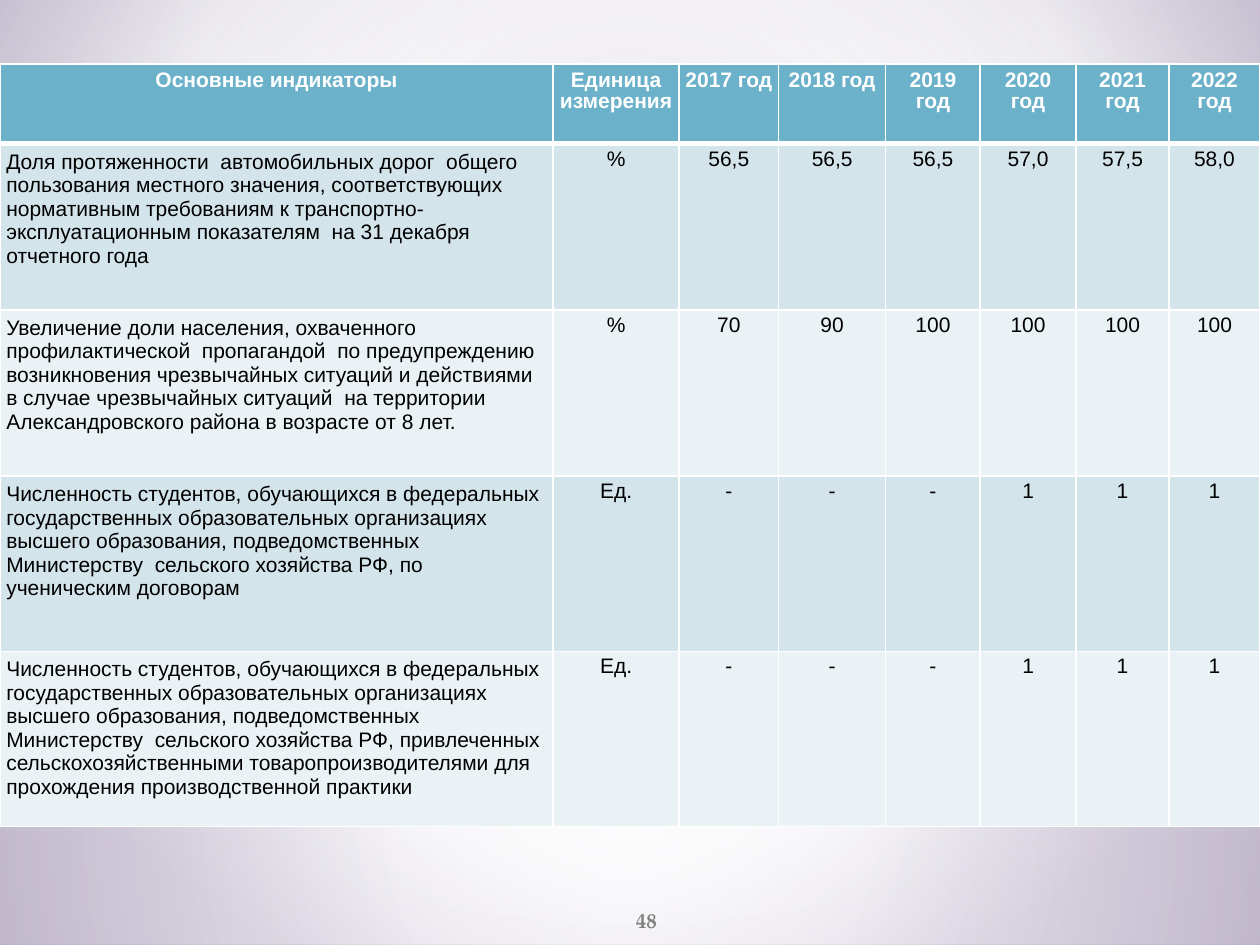
from lxml.etree import SubElement
from pptx import Presentation
from pptx.dml.color import RGBColor
from pptx.enum.shapes import MSO_SHAPE as Preset
from pptx.enum.text import MSO_ANCHOR as Anchor, PP_ALIGN as Align
from pptx.oxml.ns import qn
from pptx.util import Inches, Pt

WIDTH, HEIGHT = 10, 7.5
WHITE, BLACK, GREY = "FFFFFF", "000000", "808080"
LILAC = "C9C2D1"
HEADER_FILL, BAND_FILLS = "6BB1C9", ("D4E4EB", "EBF2F5")
CENTRE = (50, 50, 50, 50)

COLUMN_WIDTHS = (4.39, 1, 0.79, 0.85, 0.75, 0.76, 0.74, 0.72)
ROW_HEIGHTS = (0.63, 1.32, 1.32, 1.39, 1.39)
STUDENTS = (
    "Численность студентов, обучающихся в федеральных государственных "
    "образовательных организациях высшего образования, подведомственных "
    "Министерству  сельского хозяйства РФ, "
)
HEADINGS = ("Основные индикаторы", "Единица измерения", "2017 год  ",
            *(f"{year} год" for year in range(2018, 2023)))
INDICATORS = (
    ("Доля протяженности  автомобильных дорог  общего пользования местного "
     "значения, соответствующих  нормативным требованиям к "
     "транспортно-эксплуатационным показателям  на 31 декабря  отчетного года",
     "%", "56,5", "56,5", "56,5", "57,0", "57,5", "58,0"),
    ("Увеличение доли населения, охваченного профилактической  пропагандой  "
     "по предупреждению возникновения чрезвычайных ситуаций и действиями в "
     "случае чрезвычайных ситуаций  на территории Александровского района в "
     "возрасте от 8 лет.",
     "%", "70", "90", "100", "100", "100", "100"),
    (STUDENTS + "по ученическим договорам",
     "Ед.", "-", "-", "-", "1", "1", "1"),
    (STUDENTS + "привлеченных сельскохозяйственными товаропроизводителями "
     "для прохождения производственной практики",
     "Ед.", "-", "-", "-", "1", "1", "1"),
)


def rgb(colour):
    return RGBColor.from_string(colour)


def set_gradient(properties, stops, focus=None, angle=90):
    """Swap a solid fill for a gradient of (position, colour, opacity) stops."""
    solid = properties.find(qn("a:solidFill"))
    gradient = solid.makeelement(qn("a:gradFill"), {"rotWithShape": "1"})
    stop_list = SubElement(gradient, qn("a:gsLst"))
    for position, colour, opacity in stops:
        stop = SubElement(stop_list, qn("a:gs"), pos=str(position * 1000))
        tint = SubElement(stop, qn("a:srgbClr"), val=colour)
        if opacity < 100:
            SubElement(tint, qn("a:alpha"), val=str(opacity * 1000))
    if focus:
        circle = SubElement(gradient, qn("a:path"), path="circle")
        sides = {side: str(share * 1000) for side, share in zip("ltrb", focus)}
        SubElement(circle, qn("a:fillToRect"), sides)
    else:
        SubElement(gradient, qn("a:lin"), ang=str(angle * 60000), scaled="0")
    properties.replace(solid, gradient)


def add_glow(slide, box, stops, focus=None, preset=Preset.RECTANGLE):
    glow = slide.shapes.add_shape(preset, *map(Inches, box))
    glow.shadow.inherit = False
    glow.line.fill.background()
    glow.fill.solid()
    set_gradient(glow.element.spPr, stops, focus)


def add_backdrop(slide, box):
    left, top, width, height = box
    slide.background.fill.solid()
    set_gradient(slide.element.find(".//" + qn("p:bgPr")),
                 ((0, "C1B7CD", 100), (60, WHITE, 100), (100, "A191B5", 100)),
                 (20, 10, 20, 60))

    def band(start, share):
        return left, top + start * height, width, share * height

    horizon = 0.744
    add_glow(slide, band(horizon, 1 - horizon),
             ((0, WHITE, 91), (37, WHITE, 76), (100, LILAC, 79)), CENTRE)
    add_glow(slide, band(0, horizon),
             ((0, WHITE, 89), (48, WHITE, 62), (100, LILAC, 79)), CENTRE)
    add_glow(slide, band(0.55, 0.333),
             ((0, WHITE, 0), (29, WHITE, 30), (45, LILAC, 40),
              (55, WHITE, 26), (65, LILAC, 60), (100, WHITE, 0)))
    add_glow(slide, band(0.233, horizon),
             ((0, WHITE, 100), (56, WHITE, 0)), CENTRE, Preset.OVAL)


def format_text(paragraph, colour, bold, align, font="Arial", spacing=None):
    paragraph.alignment = align
    paragraph.line_spacing = spacing
    paragraph.font.name = font
    paragraph.font.size = Pt(12)
    paragraph.font.bold = bold
    paragraph.font.color.rgb = rgb(colour)


def set_borders(cell, bottom_width, top_width):
    properties = cell._tc.get_or_add_tcPr()
    widths = {"lnL": 1, "lnR": 1, "lnT": top_width, "lnB": bottom_width}
    for place, (side, width) in enumerate(widths.items()):
        line = properties.makeelement(qn(f"a:{side}"), {"w": str(Pt(width))})
        SubElement(SubElement(line, qn("a:solidFill")), qn("a:srgbClr"), val=WHITE)
        properties.insert(place, line)


def fill_cell(cell, text, row, column):
    is_header, is_name = row == 0, column == 0
    cell.text = text
    cell.fill.solid()
    cell.fill.fore_color.rgb = rgb(
        HEADER_FILL if is_header else BAND_FILLS[(row - 1) % 2])
    roomy = is_header or is_name
    cell.margin_left = cell.margin_right = Inches(0.05 if roomy else 0.04)
    cell.margin_top = cell.margin_bottom = Inches(0.05 if roomy else 0)
    paragraph = cell.text_frame.paragraphs[0]
    if is_header:
        format_text(paragraph, WHITE, True, Align.CENTER, spacing=0.9)
    elif is_name:
        format_text(paragraph, BLACK, False, Align.LEFT)
    else:
        format_text(paragraph, BLACK, False, Align.CENTER, spacing=1.15)
    set_borders(cell, 3 if is_header else 1, 3 if row == 1 else 1)


def add_indicator_table(slide, box):
    rows = (HEADINGS, *INDICATORS)
    table = slide.shapes.add_table(
        len(rows), len(HEADINGS), *map(Inches, box)).table
    for column, share in zip(table.columns, COLUMN_WIDTHS):
        column.width = Inches(box[2] * share / sum(COLUMN_WIDTHS))
    for row, share in zip(table.rows, ROW_HEIGHTS):
        row.height = Inches(box[3] * share / sum(ROW_HEIGHTS))
    for r, texts in enumerate(rows):
        for c, text in enumerate(texts):
            fill_cell(table.cell(r, c), text, r, c)


def add_page_number(slide, box, number):
    frame = slide.shapes.add_textbox(*map(Inches, box)).text_frame
    frame.word_wrap = True
    frame.vertical_anchor = Anchor.MIDDLE
    frame.text = number
    format_text(frame.paragraphs[0], GREY, True, Align.CENTER, "TeX Gyre Pagella")


def main():
    deck = Presentation()
    deck.slide_width, deck.slide_height = Inches(WIDTH), Inches(HEIGHT)
    slide = deck.slides.add_slide(deck.slide_layouts[6])
    add_backdrop(slide, (0, 0, WIDTH, HEIGHT))
    add_page_number(slide, (4.13, 7.1, 2, 0.4), "48")
    add_indicator_table(slide, (0, 0.51, WIDTH, sum(ROW_HEIGHTS)))
    deck.save("out.pptx")


if __name__ == "__main__":
    main()
